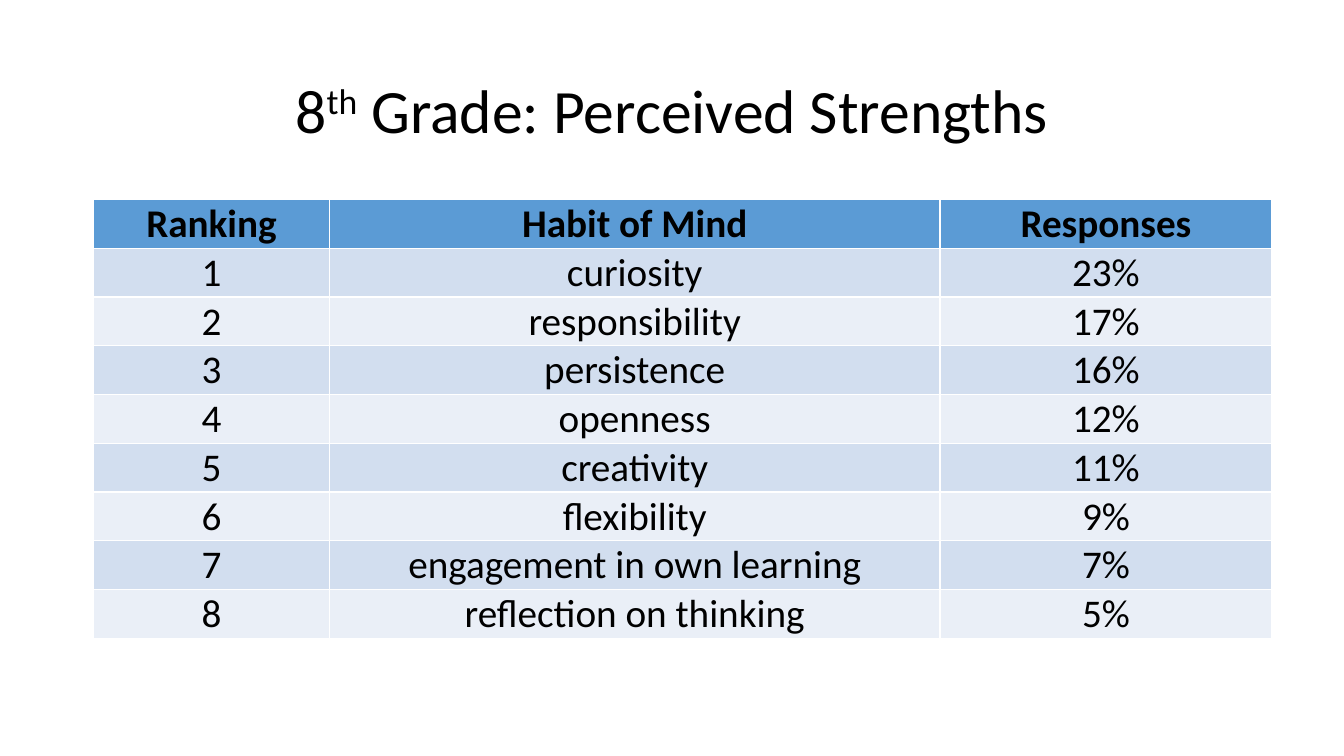
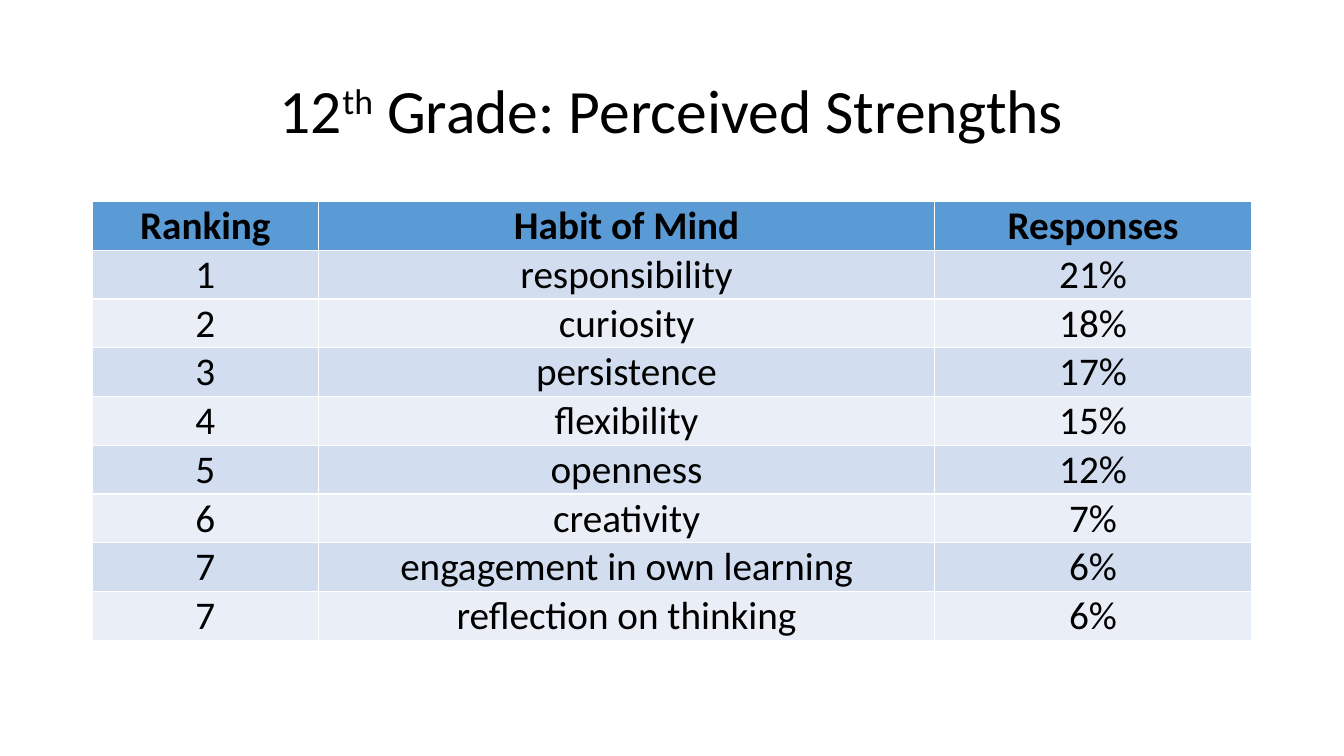
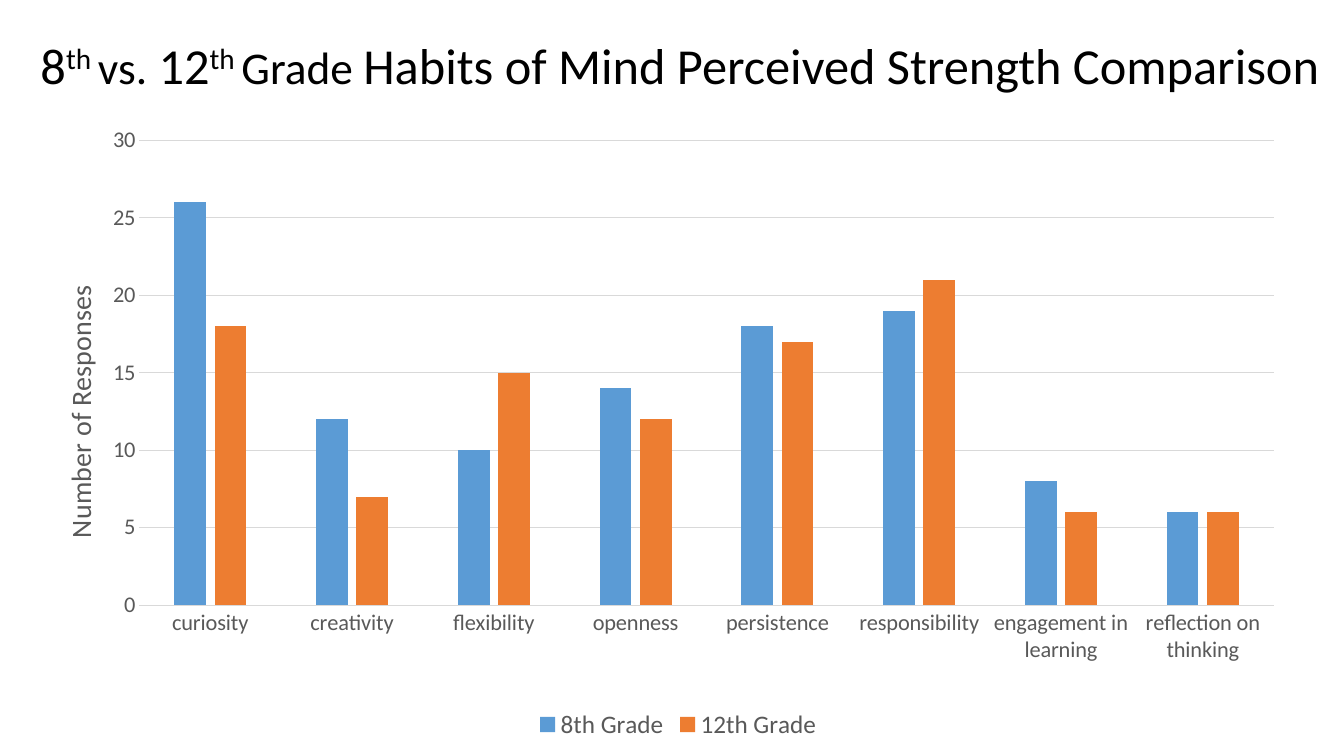
from dataclasses import dataclass

from lxml.etree import SubElement
from pptx import Presentation
from pptx.chart.data import CategoryChartData
from pptx.dml.color import RGBColor
from pptx.enum.chart import XL_CHART_TYPE, XL_LEGEND_POSITION, XL_TICK_MARK
from pptx.enum.text import MSO_ANCHOR, MSO_AUTO_SIZE, PP_ALIGN
from pptx.oxml.ns import qn
from pptx.util import Cm, Pt

FONT = "Calibri"
COLORS = {
    "text": "000000",
    "muted": "595959",
    "line": "D9D9D9",
    "blue": "5B9BD5",
    "orange": "ED7D31",
    "band_dark": "D2DEEF",
    "band_light": "EAEFF7",
}
HEADER = ("Ranking", "Habit of Mind", "Responses")
ROW_HEIGHT = 1.04
TABLE_HEIGHT = 10.9


@dataclass
class Box:
    """Position and size in centimetres."""
    left: float
    top: float
    width: float
    height: float

    def emu(self):
        return Cm(self.left), Cm(self.top), Cm(self.width), Cm(self.height)


@dataclass
class TitleRun:
    text: str
    size: float = 44
    superscript: bool = False


@dataclass
class RankingSlide:
    grade: str
    left: float
    top: float
    col_widths: tuple[float, ...]
    rows: list[tuple[str, str, str]]


@dataclass
class Series:
    name: str
    color: str
    values: tuple[int, ...]


TITLE_BOX = Box(2.33, 1.02, 29.21, 3.68)
WIDE_TITLE_BOX = Box(0.43, 0.53, 33.42, 2.36)
CHART_BOX = Box(0.81, 2.62, 32.56, 16.15)

RANKINGS = [
    RankingSlide("8", 2.36, 5.03, (5.94, 15.39, 8.36), [
        ("1", "curiosity", "23%"),
        ("2", "responsibility", "17%"),
        ("3", "persistence", "16%"),
        ("4", "openness", "12%"),
        ("5", "creativity", "11%"),
        ("6", "flexibility", "9%"),
        ("7", "engagement in own learning", "7%"),
        ("8", "reflection on thinking", "5%"),
    ]),
    RankingSlide("12", 2.33, 5.08, (5.69, 15.54, 7.97), [
        ("1", "responsibility", "21%"),
        ("2", "curiosity", "18%"),
        ("3", "persistence", "17%"),
        ("4", "flexibility", "15%"),
        ("5", "openness", "12%"),
        ("6", "creativity", "7%"),
        ("7", "engagement in own learning", "6%"),
        ("7", "reflection on thinking", "6%"),
    ]),
]

COMPARISON_TITLE = [
    TitleRun("8", 36),
    TitleRun("th ", 36, True),
    TitleRun("vs.", 32.4),
    TitleRun(" 12", 36),
    TitleRun("th ", 36, True),
    TitleRun("Grade ", 32.4),
    TitleRun("Habits of Mind Perceived Strength Comparison", 36),
]
HABITS = ("curiosity", "creativity", "flexibility", "openness", "persistence",
          "responsibility", "engagement in learning", "reflection on thinking")
SERIES = [
    Series("8th Grade", "blue", (26, 12, 10, 14, 18, 19, 8, 6)),
    Series("12th Grade", "orange", (18, 7, 15, 12, 17, 21, 6, 6)),
]


def rgb(name: str) -> RGBColor:
    return RGBColor.from_string(COLORS[name])


def style_font(font, size: float, color: str = "text", bold: bool = False) -> None:
    font.name = FONT
    font.size = Pt(size)
    font.bold = bold
    font.color.rgb = rgb(color)


def add_titled_slide(prs, box: Box, runs: list[TitleRun]):
    s = prs.slides.add_slide(prs.slide_layouts.get_by_name("Title Only"))
    title = s.shapes.title
    title.left, title.top, title.width, title.height = box.emu()
    tf = title.text_frame
    tf.word_wrap = True
    tf.auto_size = MSO_AUTO_SIZE.NONE
    tf.vertical_anchor = MSO_ANCHOR.MIDDLE
    p = tf.paragraphs[0]
    p.alignment = PP_ALIGN.CENTER
    p.line_spacing = 0.9
    for run in runs:
        r = p.add_run()
        r.text = run.text
        style_font(r.font, run.size)
        if run.superscript:
            r._r.get_or_add_rPr().set("baseline", "30000")
    return s


def fill_cell(cell, text: str, fill: str, bold: bool) -> None:
    cell.fill.solid()
    cell.fill.fore_color.rgb = rgb(fill)
    cell.vertical_anchor = MSO_ANCHOR.BOTTOM
    cell.margin_left = cell.margin_top = cell.margin_right = Cm(0.02)
    cell.margin_bottom = 0
    p = cell.text_frame.paragraphs[0]
    p.text = text
    p.alignment = PP_ALIGN.CENTER
    style_font(p.runs[0].font, 28, bold=bold)


def add_ranking_slide(prs, ranking: RankingSlide) -> None:
    s = add_titled_slide(prs, TITLE_BOX, [
        TitleRun(ranking.grade),
        TitleRun("th", superscript=True),
        TitleRun(" Grade: Perceived Strengths"),
    ])
    rows = [HEADER, *ranking.rows]
    box = Box(ranking.left, ranking.top, sum(ranking.col_widths), TABLE_HEIGHT)
    frame = s.shapes.add_table(len(rows), len(HEADER), *box.emu())
    table = frame.table
    for column, width in zip(table.columns, ranking.col_widths):
        column.width = Cm(width)
    for i, values in enumerate(rows):
        table.rows[i].height = Cm(ROW_HEIGHT)
        fill = "blue" if i == 0 else "band_dark" if i % 2 else "band_light"
        for j, text in enumerate(values):
            fill_cell(table.cell(i, j), text, fill, bold=i == 0)
    frame.height = Cm(TABLE_HEIGHT)


def set_layout(parent, index: int, **settings) -> None:
    """Give a chart part a manual layout, as fractions of the chart."""
    for old in parent.findall(qn("c:layout")):
        parent.remove(old)
    layout = SubElement(parent, qn("c:layout"))
    parent.insert(index, layout)
    manual = SubElement(layout, qn("c:manualLayout"))
    for tag, value in settings.items():
        SubElement(manual, qn(f"c:{tag}")).set("val", str(value))


def style_axis(axis) -> None:
    axis.major_tick_mark = axis.minor_tick_mark = XL_TICK_MARK.NONE
    style_font(axis.tick_labels.font, 16, "muted")


def style_line(line) -> None:
    line.color.rgb = rgb("line")
    line.width = Pt(0.75)


def add_comparison_slide(prs) -> None:
    s = add_titled_slide(prs, WIDE_TITLE_BOX, COMPARISON_TITLE)
    data = CategoryChartData()
    data.categories = HABITS
    for series in SERIES:
        data.add_series(series.name, series.values)
    chart = s.shapes.add_chart(
        XL_CHART_TYPE.COLUMN_CLUSTERED, *CHART_BOX.emu(), data).chart
    style_font(chart.font, 10)
    chart.has_title = False

    plot = chart.plots[0]
    plot.vary_by_categories = False
    plot.gap_width = 219
    plot.overlap = -27
    for bars, series in zip(plot.series, SERIES):
        bars.format.fill.solid()
        bars.format.fill.fore_color.rgb = rgb(series.color)

    style_axis(chart.category_axis)
    style_line(chart.category_axis.format.line)
    axis = chart.value_axis
    style_axis(axis)
    axis.minimum_scale, axis.maximum_scale, axis.major_unit = 0, 30, 5
    axis.format.line.fill.background()
    style_line(axis.major_gridlines.format.line)

    tf = axis.axis_title.text_frame
    tf.text = "Number of Responses"
    style_font(tf.paragraphs[0].runs[0].font, 20, "muted")
    set_layout(axis.axis_title._element, 1,
               xMode="edge", yMode="edge", x=0.018, y=0.275)
    set_layout(chart._chartSpace.chart.plotArea, 0, layoutTarget="inner",
               xMode="edge", yMode="edge", x=0.083, y=0.057, w=0.878, h=0.725)

    chart.has_legend = True
    chart.legend.position = XL_LEGEND_POSITION.BOTTOM
    chart.legend.include_in_layout = False
    style_font(chart.legend.font, 18, "muted")


def main() -> None:
    prs = Presentation()
    prs.slide_width, prs.slide_height = Cm(33.87), Cm(19.05)
    for ranking in RANKINGS:
        add_ranking_slide(prs, ranking)
    add_comparison_slide(prs)
    prs.save("out.pptx")


if __name__ == "__main__":
    main()
